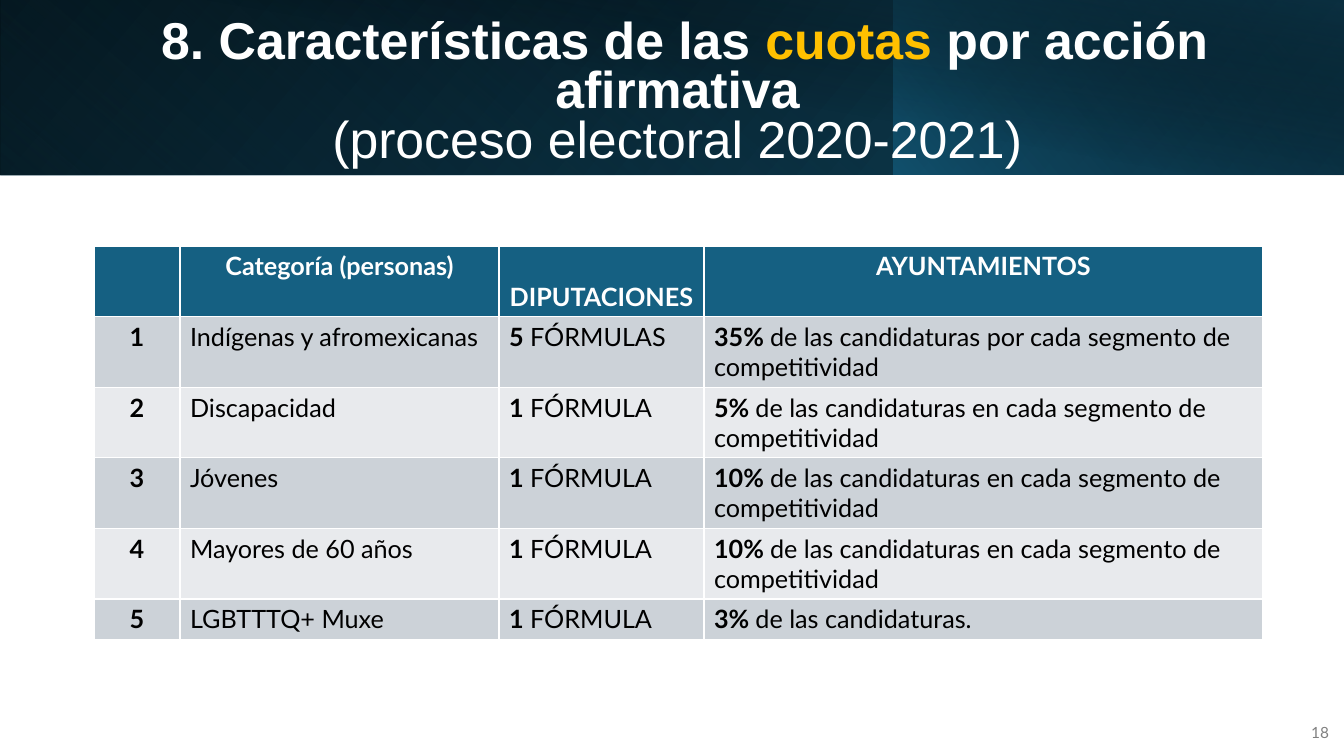
"""Builds a slide with a banner title and a table of affirmative action quotas."""
from lxml.etree import SubElement
from pptx import Presentation
from pptx.dml.color import RGBColor
from pptx.enum.shapes import MSO_SHAPE as Shape
from pptx.enum.text import MSO_ANCHOR as Anchor, MSO_AUTO_SIZE as AutoSize, PP_ALIGN as Align
from pptx.oxml.ns import qn
from pptx.util import Pt

PX = 914400 / 100.8
WHITE = RGBColor(0xFF, 0xFF, 0xFF)
BLACK = RGBColor(0x00, 0x00, 0x00)
GOLD = RGBColor(0xFF, 0xC0, 0x00)
GRAY = RGBColor(0x80, 0x80, 0x80)
TEAL = RGBColor(0x15, 0x60, 0x82)
DEEP_TEAL = RGBColor(0x10, 0x48, 0x62)
NAVY = RGBColor(0x0B, 0x30, 0x41)
DARK_ROW = RGBColor(0xCC, 0xD2, 0xD8)
LIGHT_ROW = RGBColor(0xE8, 0xEA, 0xED)


def px(*lengths):
    """Turns pixel lengths into EMU."""
    return [round(length * PX) for length in lengths]


def write(paragraph, text, size=18, color=BLACK, bold=False, font="Lato", align=Align.LEFT):
    """Adds a formatted run to a paragraph."""
    paragraph.alignment = align
    run = paragraph.add_run()
    run.text = text
    run.font.size = Pt(size)
    run.font.color.rgb = color
    run.font.bold = bold
    run.font.name = font


presentation = Presentation()
presentation.slide_width, presentation.slide_height = px(1344, 756)
slide = presentation.slides.add_slide(presentation.slide_layouts[5])

banner_layers = [
    ((0, 0, 1344, 175), 0, True, 140, [(0, BLACK, 100), (100, DEEP_TEAL, 100)]),
    ((0, 0, 895, 175), 180, True, 230, [(20, TEAL, 0), (100, NAVY, 55)]),
    ((894, 0, 450, 175), 0, True, 220, [(0, TEAL, 66), (100, BLACK, 30)]),
    ((50, 0, 1294, 176), 0, False, 280, [(50, BLACK, 0), (99, NAVY, 52)]),
]
for box, rotation, flipped, angle, stops in banner_layers:
    layer = slide.shapes.add_shape(Shape.RECTANGLE, *px(*box))
    layer.shadow.inherit = False
    layer.line.fill.background()
    layer.rotation = rotation
    if flipped:
        layer.element.spPr.find(qn("a:xfrm")).set("flipH", "1")
    layer.fill.gradient()
    layer.fill.gradient_angle = 360 - angle
    for stop, (position, color, opacity) in zip(layer.fill.gradient_stops, stops):
        stop.position = position / 100
        stop.color.rgb = color
    for color_element, (position, color, opacity) in zip(layer.element.iter(qn("a:srgbClr")), stops):
        SubElement(color_element, qn("a:alpha")).set("val", str(opacity * 1000))

number_box = slide.shapes.add_textbox(*px(1290, 712, 49, 40))
number_frame = number_box.text_frame
number_frame.word_wrap = True
number_frame.vertical_anchor = Anchor.MIDDLE
number_frame.paragraphs[0].space_after = Pt(6)
write(number_frame.paragraphs[0], "18", size=11, color=GRAY, align=Align.RIGHT)

title = slide.shapes.title
title.element.getparent().append(title.element)
title.left, title.top, title.width, title.height = px(50, 37, 1255, 114)
title_frame = title.text_frame
title_frame.word_wrap = True
title_frame.auto_size = AutoSize.NONE
title_frame.vertical_anchor = Anchor.MIDDLE
title_lines = [
    [(" 8. Características de las ", WHITE, True), ("cuotas", GOLD, True), (" por acción afirmativa", WHITE, True)],
    [("(proceso electoral 2020-2021)", WHITE, False)],
]
title_frame.add_paragraph()
for paragraph, line in zip(title_frame.paragraphs, title_lines):
    paragraph.line_spacing = 0.8
    for text, color, bold in line:
        write(paragraph, text, size=37, color=color, bold=bold, font="Arial", align=Align.CENTER)

headers = ["", "Categoría (personas)", " DIPUTACIONES", "AYUNTAMIENTOS"]
segment = "de las candidaturas en cada segmento de competitividad"
quotas = [
    ("Indígenas y afromexicanas", "5", " FÓRMULAS", "35% ",
     "de las candidaturas por cada segmento de competitividad"),
    ("Discapacidad", "1", " FÓRMULA", "5% ", segment),
    ("Jóvenes", "1", " FÓRMULA", "10% ", segment),
    ("Mayores de 60 años", "1", " FÓRMULA", "10% ", segment),
    ("LGBTTTQ+ Muxe", "1", " FÓRMULA", "3% ", "de las candidaturas."),
]
table = slide.shapes.add_table(len(quotas) + 1, len(headers), *px(94, 246, 1169, 246)).table
for column, width in zip(table.columns, px(86, 319, 205, 559)):
    column.width = width
for row in table.rows:
    row.height = px(41)[0]

for cell, header in zip(table.rows[0].cells, headers):
    cell.fill.solid()
    cell.fill.fore_color.rgb = TEAL
    if header:
        write(cell.text_frame.paragraphs[0], header, color=WHITE, bold=True, align=Align.CENTER)

for number, (category, count, unit, share, scope) in enumerate(quotas, start=1):
    row_runs = [[(str(number), True)], [(category, False)],
                [(count, True), (unit, False)], [(share, True), (scope, False)]]
    for column, (cell, runs) in enumerate(zip(table.rows[number].cells, row_runs)):
        cell.fill.solid()
        cell.fill.fore_color.rgb = DARK_ROW if number % 2 else LIGHT_ROW
        for text, bold in runs:
            write(cell.text_frame.paragraphs[0], text, bold=bold,
                  align=Align.LEFT if column else Align.CENTER)

presentation.save("out.pptx")
